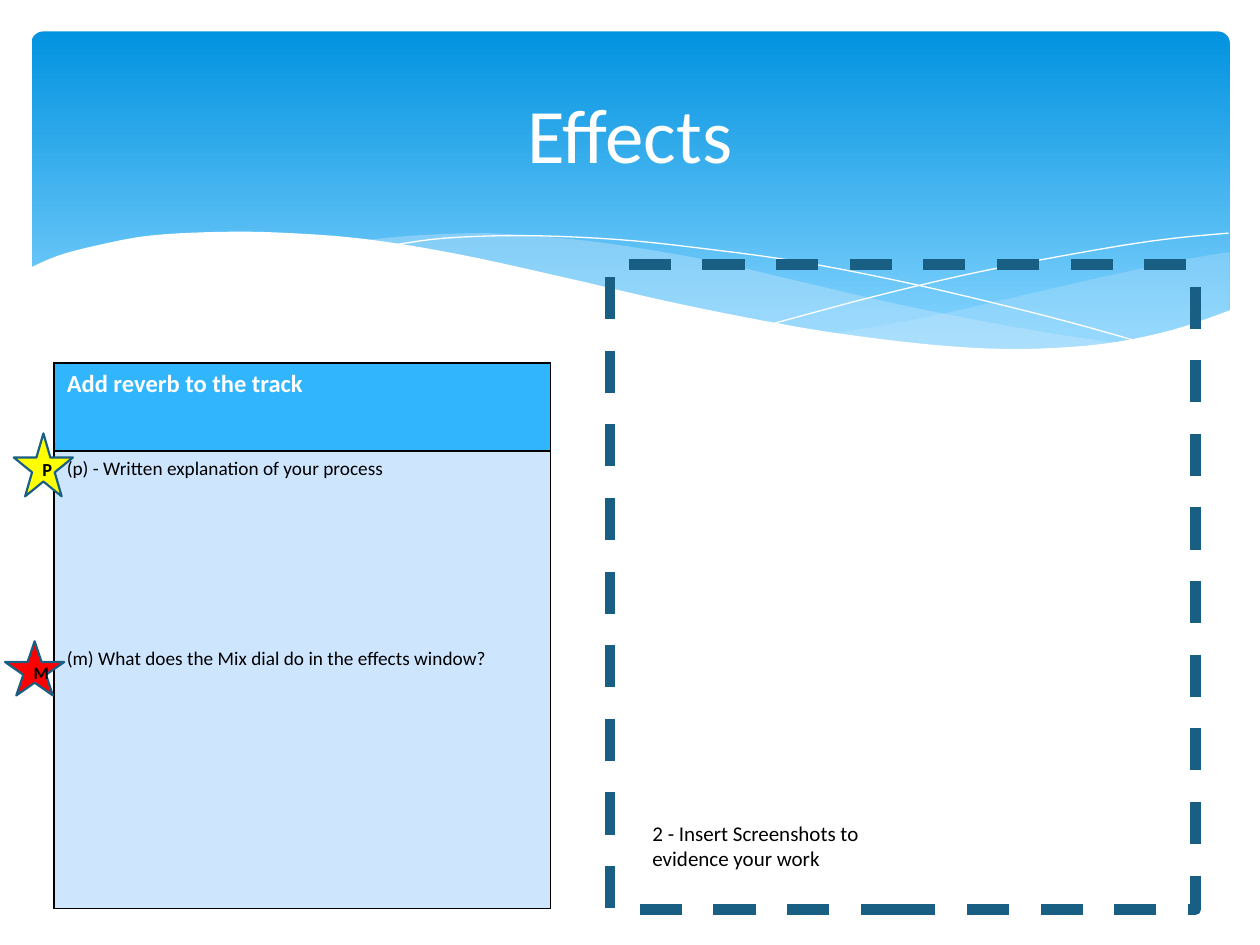
from dataclasses import dataclass
from typing import Optional

from lxml import etree
from pptx import Presentation
from pptx.dml.color import RGBColor
from pptx.enum.dml import MSO_LINE
from pptx.enum.shapes import MSO_SHAPE
from pptx.enum.text import MSO_ANCHOR, PP_ALIGN
from pptx.oxml.ns import qn
from pptx.util import Inches, Pt

ROUNDED, RECT, STAR = (MSO_SHAPE.ROUNDED_RECTANGLE, MSO_SHAPE.RECTANGLE,
                       MSO_SHAPE.STAR_5_POINT)
DASH, MIDDLE, CENTER = MSO_LINE.DASH, MSO_ANCHOR.MIDDLE, PP_ALIGN.CENTER
FONT = "Calibri"
WHITE, BLACK, MIST, NAVY = "FFFFFF", "000000", "C6E7FC", "195F84"
Curve = list[tuple[float, float]]


@dataclass
class Wave:
    edges: list[Curve]  # smooth curves, joined by straight lines
    fill: Optional[str] = None
    alpha: int = 100


@dataclass
class Star:
    letter: str
    box: tuple[float, float, float, float]
    fill: str
    size: float


WAVES = [
    Wave([[(9.76, 2), (9.35, 2.07), (8.61, 2.23), (7.79, 2.42), (7.29, 2.53), (6.61, 2.65)],
          [(6.61, 2.65), (7.05, 2.71), (7.57, 2.76), (8.14, 2.78), (8.63, 2.75),
           (9.05, 2.69), (9.42, 2.59), (9.76, 2.47)]], MIST, 29),
    Wave([[(8.93, 2.73), (8.37, 2.65), (7.75, 2.54), (7.06, 2.4), (6.29, 2.22),
           (5.69, 2.08), (5.14, 1.98), (4.65, 1.91), (4.2, 1.87), (3.8, 1.85),
           (3.28, 1.87), (2.86, 1.91)],
          [(2.86, 1.91), (3.42, 1.99), (4.04, 2.11), (4.91, 2.32), (5.66, 2.48),
           (6.34, 2.61), (6.95, 2.7), (7.48, 2.76), (8.07, 2.78), (8.57, 2.77),
           (8.93, 2.73)]], MIST, 40),
    Wave([[(3.09, 1.95), (3.53, 1.89), (4.16, 1.87), (4.89, 1.9), (5.56, 1.97),
           (6.36, 2.08), (7.27, 2.26), (8.31, 2.51), (9.07, 2.72)]]),
    Wave([[(6.13, 2.57), (6.95, 2.35), (7.76, 2.16), (8.66, 1.99), (9.24, 1.9),
           (9.75, 1.85)]]),
    Wave([[(9.77, 2.46), (9.3, 2.62), (8.75, 2.73), (8.09, 2.77), (7.44, 2.74),
           (6.68, 2.65), (6.03, 2.54), (5.29, 2.39), (4.47, 2.2), (3.65, 2.02),
           (2.92, 1.9), (2.3, 1.85), (1.77, 1.84), (1.19, 1.87), (0.76, 1.95),
           (0.46, 2.03), (0.23, 2.13)],
          [(0.23, 3.29), (9.77, 3.29)]], WHITE),
]
STARS = [
    Star("M", (0.04, 5.09, 0.47, 0.43), "FF0000", 10),
    Star("P", (0.11, 3.44, 0.47, 0.5), "FFFF00", 10.5),
]


def color(hex_code: str) -> RGBColor:
    return RGBColor.from_string(hex_code)


def style(paragraph, size: float, hex_code: str, bold: bool = False) -> None:
    for run in paragraph.runs:
        font = run.font
        font.name, font.size, font.bold = FONT, Pt(size), bold
        font.color.rgb = color(hex_code)


def smooth(knots: Curve, steps: int = 5) -> Curve:
    """Sample a Catmull-Rom curve through the knots."""
    if len(knots) < 3:
        return knots
    padded = [knots[0], *knots, knots[-1]]
    points = [knots[0]]
    for a, b, c, d in zip(padded, padded[1:], padded[2:], padded[3:]):
        for step in range(1, steps + 1):
            t = step / steps
            points.append(tuple(
                0.5 * (2 * q + (r - p) * t + (2 * p - 5 * q + 4 * r - s) * t ** 2
                       + (3 * q - p - 3 * r + s) * t ** 3)
                for p, q, r, s in zip(a, b, c, d)))
    return points


def add_wave(shapes, wave: Wave) -> None:
    points = [(Inches(x), Inches(y)) for edge in wave.edges for x, y in smooth(edge)]
    builder = shapes.build_freeform(*points[0], scale=1.0)
    builder.add_line_segments(points[1:], close=wave.fill is not None)
    ribbon = builder.convert_to_shape()
    ribbon.shadow.inherit = False
    if wave.fill is None:
        ribbon.fill.background()
        ribbon.line.color.rgb = color(WHITE)
        ribbon.line.width = Pt(0)
        return
    ribbon.line.fill.background()
    ribbon.fill.solid()
    ribbon.fill.fore_color.rgb = color(wave.fill)
    if wave.alpha < 100:
        tint = ribbon.fill._xPr.find(qn("a:solidFill"))[0]
        etree.SubElement(tint, qn("a:alpha"), val=str(wave.alpha * 1000))


def add_preset(shapes, preset, box, line: Optional[str] = None, width: float = 0):
    shape = shapes.add_shape(preset, *map(Inches, box))
    shape.shadow.inherit = False
    if line:
        shape.line.color.rgb = color(line)
        shape.line.width = Pt(width)
    else:
        shape.line.fill.background()
    return shape


def add_star(shapes, star: Star) -> None:
    badge = add_preset(shapes, STAR, star.box, NAVY, 1.25)
    badge.fill.solid()
    badge.fill.fore_color.rgb = color(star.fill)
    frame = badge.text_frame
    frame.text = star.letter
    frame.vertical_anchor = MIDDLE
    frame.paragraphs[0].alignment = CENTER
    style(frame.paragraphs[0], star.size, BLACK, True)


def add_text(shapes, box, text: str, size: float, hex_code: str):
    frame = shapes.add_textbox(*map(Inches, box)).text_frame
    frame.word_wrap = True
    frame.text = text
    style(frame.paragraphs[0], size, hex_code)
    return frame


def fill_cell(cell, lines: list[str], fill: str, size: float, hex_code: str,
              bold: bool = False, gap: float = 0) -> None:
    cell.text = "\n".join(lines)
    for index, paragraph in enumerate(cell.text_frame.paragraphs):
        style(paragraph, size, hex_code, bold)
        if index:
            paragraph.space_before = Pt(gap)
    properties = cell._tc.get_or_add_tcPr()
    for side in ("lnL", "lnR", "lnT", "lnB"):
        border = etree.SubElement(properties, qn(f"a:{side}"), w=str(Pt(1)))
        paint = etree.SubElement(border, qn("a:solidFill"))
        etree.SubElement(paint, qn("a:srgbClr"), val=BLACK)
    cell.fill.solid()
    cell.fill.fore_color.rgb = color(fill)


def main() -> None:
    prs = Presentation()
    prs.slide_width, prs.slide_height = Inches(10), Inches(7.5)
    shapes = prs.slides.add_slide(prs.slide_layouts[6]).shapes

    # Blue banner with waves
    banner = add_preset(shapes, ROUNDED, (0.25, 0.25, 9.51, 2.7))
    banner.adjustments[0] = 0.034
    banner.fill.gradient()
    banner.fill.gradient_angle = 270
    for stop, (position, shade) in zip(banner.fill.gradient_stops,
                                       [(0, "0293E0"), (0.9, "83D3FE")]):
        stop.position, stop.color.rgb = position, color(shade)
    for wave in WAVES:
        add_wave(shapes, wave)

    # Title
    title = add_text(shapes, (0.5, 0.37, 9, 1.37), "Effects", 44, WHITE)
    title.vertical_anchor = MIDDLE
    title.paragraphs[0].alignment = CENTER

    # Task table
    task = shapes.add_table(2, 1, *map(Inches, (0.43, 2.88, 3.94, 4.33))).table
    for row, height in zip(task.rows, (0.7, 3.63)):
        row.height = Inches(height)
    fill_cell(task.cell(0, 0), ["Add reverb to the track"], "31B6FD", 14, WHITE, True)
    fill_cell(task.cell(1, 0),
              ["(p) - Written explanation of your process",
               "(m) What does the Mix dial do in the effects window?"],
              "CEE5FE", 11, BLACK, gap=95)

    # Screenshot area
    area = add_preset(shapes, RECT, (4.84, 2.1, 4.65, 5.12), NAVY, 6)
    area.fill.background()
    area.line.dash_style = DASH
    add_text(shapes, (5.08, 6.46, 2.36, 0.5),
             "2 - Insert Screenshots to evidence your work", 12, BLACK)

    # Grade stars
    for star in STARS:
        add_star(shapes, star)

    prs.save("out.pptx")


if __name__ == "__main__":
    main()
